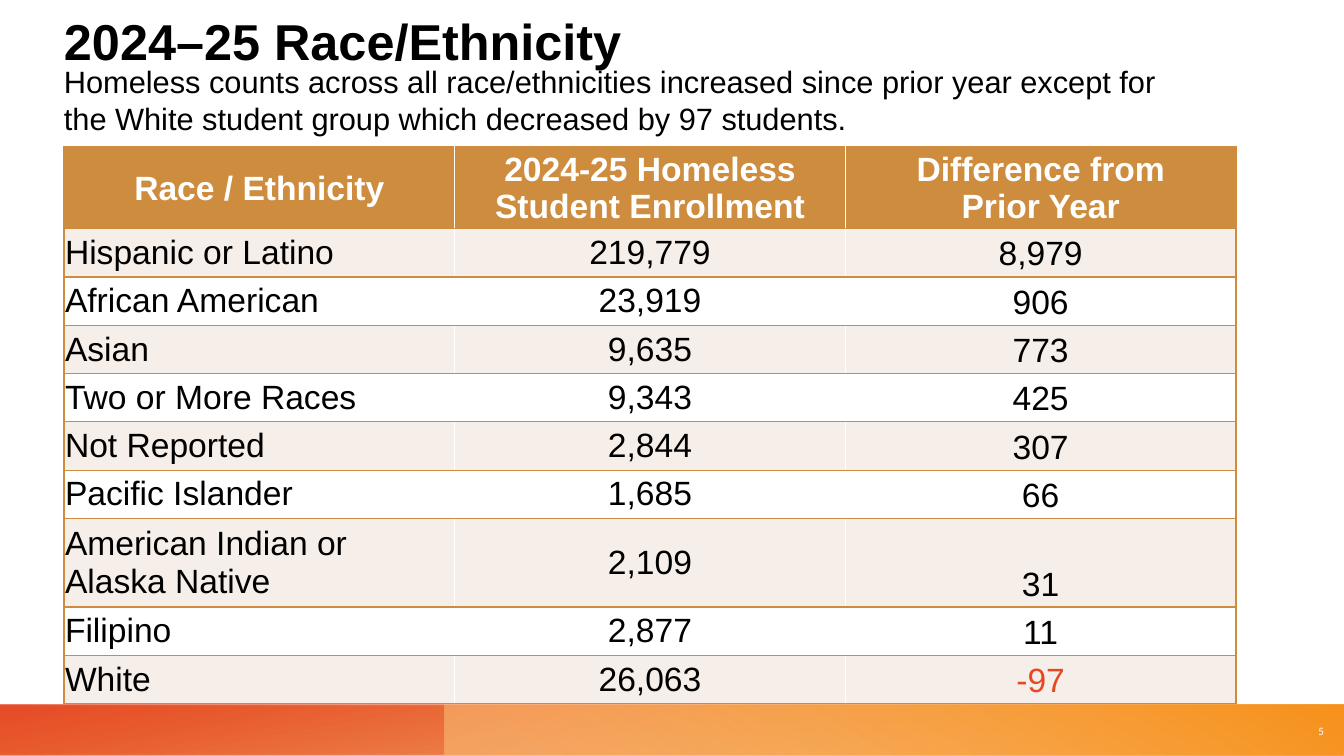
import pptx
import pptx.util
import pptx.dml.color
import pptx.enum.shapes
import pptx.enum.text
import pptx.oxml.ns
import lxml.etree

RGB = pptx.dml.color.RGBColor
BLACK = RGB(0x00, 0x00, 0x00)
WHITE = RGB(0xFF, 0xFF, 0xFF)
BRONZE = RGB(0xCE, 0x8D, 0x3E)
CREAM = RGB(0xF6, 0xEE, 0xE8)
RED = RGB(0xE6, 0x48, 0x23)
EMBER = RGB(0xEC, 0x70, 0x16)
APRICOT = RGB(0xFB, 0xBE, 0x77)
ORANGE = RGB(0xF8, 0x93, 0x1D)

ALIGN = pptx.enum.text.PP_ALIGN
ANCHOR = pptx.enum.text.MSO_ANCHOR
qn = pptx.oxml.ns.qn


def px(length):
    return pptx.util.Emu(round(length * 914400 / 100.8))


def style_text(frame, text, size, color, bold=False, align=ALIGN.LEFT, font="Arial"):
    frame.word_wrap = True
    frame.text = text
    for para in frame.paragraphs:
        para.alignment = align
        para.font.name = font
        para.font.size = pptx.util.Pt(size)
        para.font.bold = bold
        para.font.color.rgb = color


deck = pptx.Presentation()
deck.slide_width = px(1344)
deck.slide_height = px(756)
page = deck.slides.add_slide(deck.slide_layouts[6])

red_stops = [(0.14, EMBER, 28), (1, RED, 85)]
orange_stops = [(0.09, APRICOT, 55), (0.99, ORANGE, 100)]
for top in (705, 706):
    for left, angle, stops in ((0, 100, red_stops), (445, 60, orange_stops)):
        bar = page.shapes.add_shape(
            pptx.enum.shapes.MSO_SHAPE.RECTANGLE,
            px(left), px(top), px(1344 - left), px(50))
        bar.shadow.inherit = False
        bar.line.fill.background()
        bar.fill.gradient()
        bar.fill.gradient_angle = angle
        for stop, (position, color, _) in zip(bar.fill.gradient_stops, stops):
            stop.position = position
            stop.color.rgb = color
        for tint, (_, _, opacity) in zip(bar._element.spPr.iter(qn("a:srgbClr")), stops):
            lxml.etree.SubElement(tint, qn("a:alpha"), val=str(opacity * 1000))

title = page.shapes.add_textbox(px(64), px(17), px(1190), px(46))
title_frame = title.text_frame
title_frame.margin_left = title_frame.margin_right = 0
title_frame.margin_top = title_frame.margin_bottom = 0
title_frame.vertical_anchor = ANCHOR.MIDDLE
style_text(title_frame, "2024–25 Race/Ethnicity", 36, BLACK, bold=True)

number = page.shapes.add_textbox(px(1286), px(707), px(48), px(49))
number.text_frame.vertical_anchor = ANCHOR.MIDDLE
style_text(number.text_frame, "5", 8, WHITE, align=ALIGN.RIGHT, font="Calibri")

rows = [
    ("Race / Ethnicity", "2024-25 Homeless Student Enrollment", "Difference from\nPrior Year"),
    ("Hispanic or Latino", "219,779", "8,979"),
    ("African American", "23,919", "906"),
    ("Asian", "9,635", "773"),
    ("Two or More Races", "9,343", "425"),
    ("Not Reported", "2,844", "307"),
    ("Pacific Islander", "1,685", "66"),
    ("American Indian or Alaska Native", "2,109", "31"),
    ("Filipino", "2,877", "11"),
    ("White", "26,063", "-97"),
]
heights = [76] + [46] * 6 + [83] + [46] * 2
table = page.shapes.add_table(
    len(rows), 3, px(64), px(147), px(1172), px(sum(heights))).table
for column in table.columns:
    column.width = px(1172 / 3)

for r, values in enumerate(rows):
    table.rows[r].height = px(heights[r])
    header = r == 0
    for c, value in enumerate(values):
        cell = table.cell(r, c)
        cell.margin_left = cell.margin_right = px(1)
        cell.margin_top = px(1 if header else 4)
        cell.margin_bottom = px(0 if header else 4)
        cell.vertical_anchor = ANCHOR.BOTTOM if c == 2 and not header else ANCHOR.MIDDLE

        sides = {0: ["a:lnL"], 1: [], 2: ["a:lnR"]}[c] + ["a:lnT", "a:lnB"]
        for side in sides:
            edge = lxml.etree.SubElement(cell._tc.get_or_add_tcPr(), qn(side), w="12700")
            paint = lxml.etree.SubElement(edge, qn("a:solidFill"))
            lxml.etree.SubElement(paint, qn("a:srgbClr"), val=str(BRONZE))

        cell.fill.solid()
        cell.fill.fore_color.rgb = BRONZE if header else CREAM if r % 2 else WHITE
        color = WHITE if header else RED if value.startswith("-") else BLACK
        align = ALIGN.CENTER if header or c else ALIGN.LEFT
        style_text(cell.text_frame, value, 24, color, bold=header, align=align)

summary = page.shapes.add_textbox(px(54), px(58), px(1157), px(85))
style_text(
    summary.text_frame,
    "Homeless counts across all race/ethnicities increased since prior year except for "
    "the White student group which decreased by 97 students.",
    22, BLACK)

deck.save("out.pptx")
